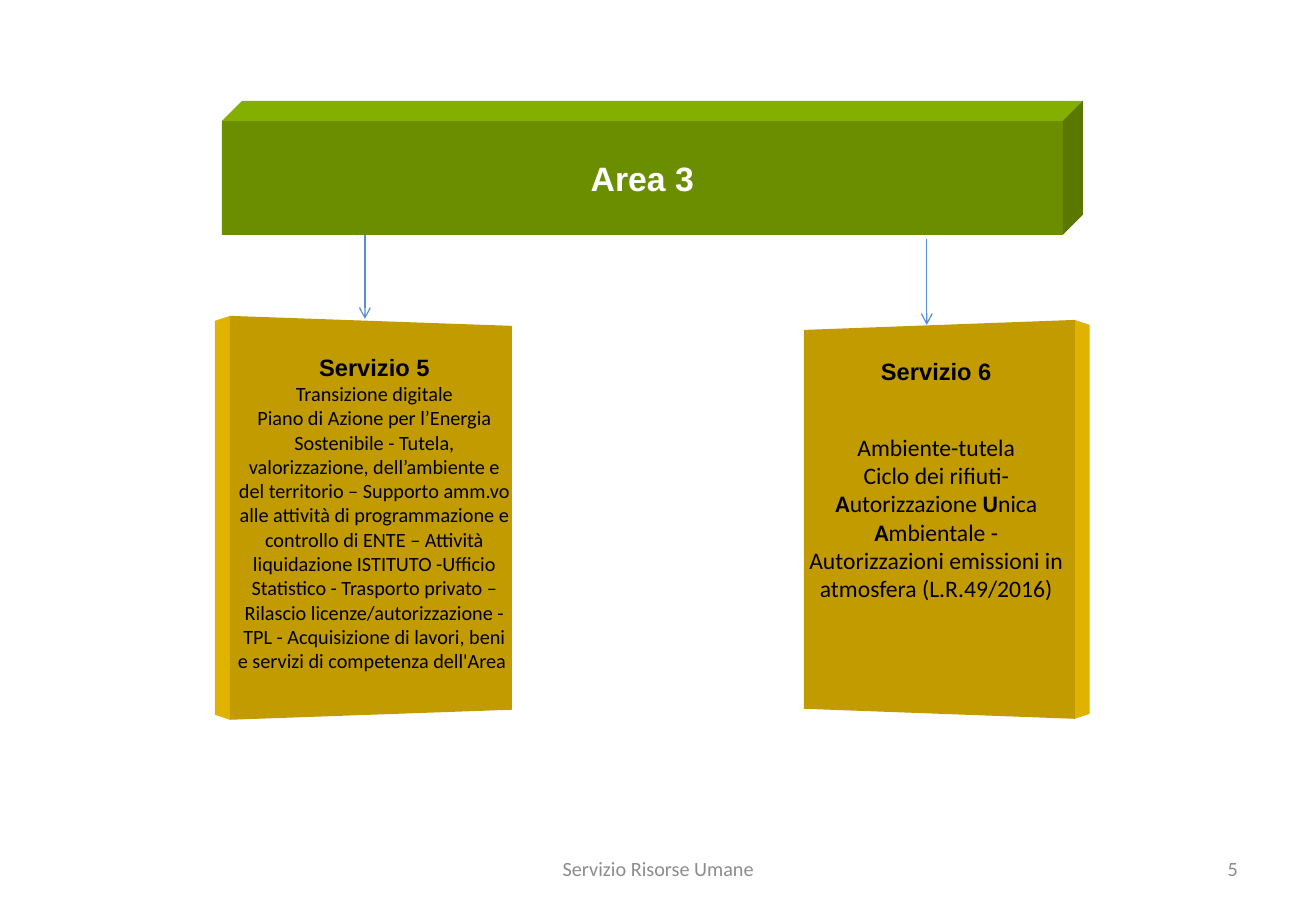
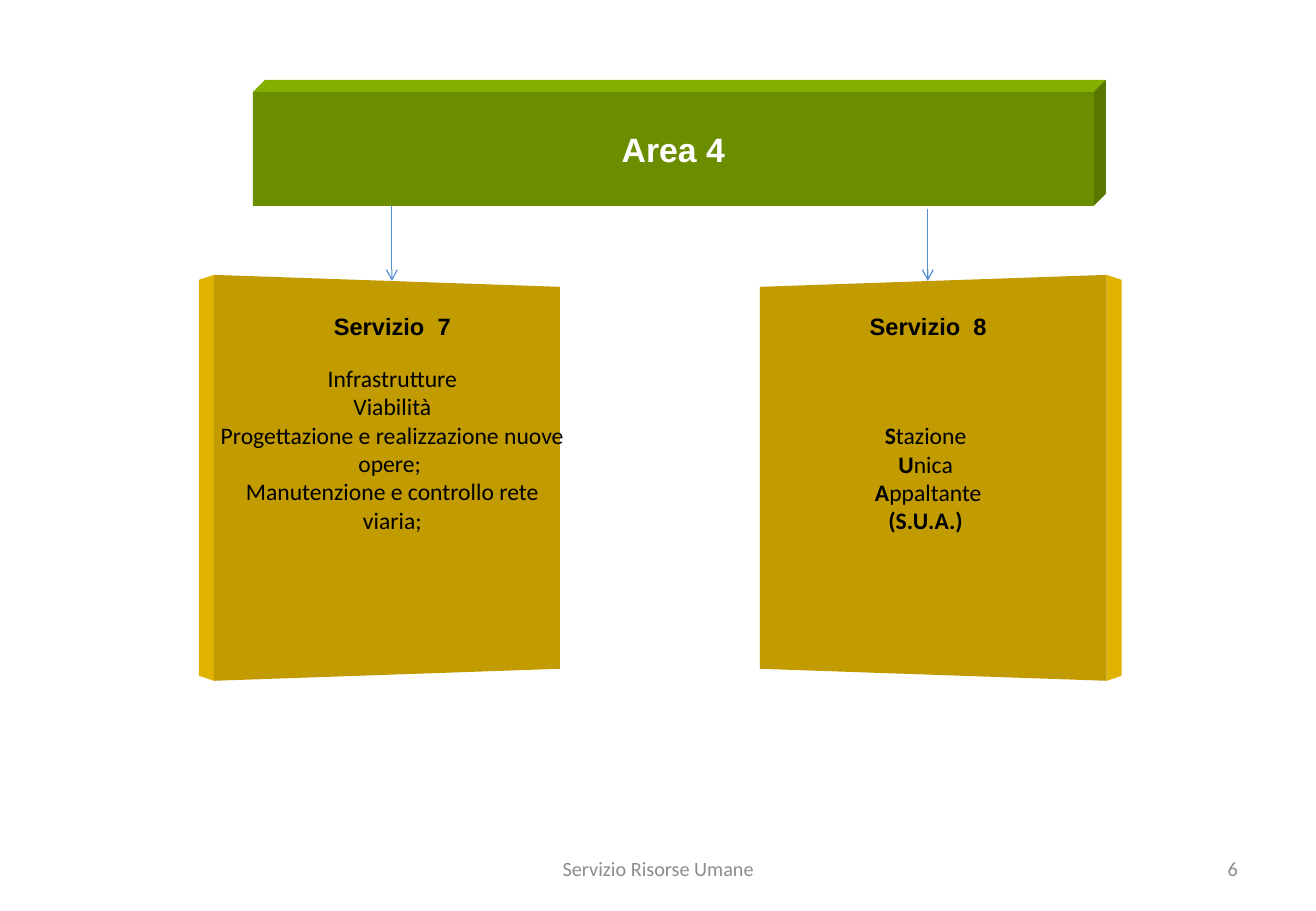
"""Build two organisation slides, each an area bar above two service panels."""
from dataclasses import dataclass

from lxml import etree
from pptx import Presentation
from pptx import util as u
from pptx.dml.color import RGBColor
from pptx.enum import shapes, text
from pptx.oxml.ns import qn

PX = 7526
BAR_W, BAR_H = 841, 114
SIDE_W, SIDE_DROP = 15, 5
HEADING_DROP = 37

WHITE = RGBColor(0xFF, 0xFF, 0xFF)
BLACK = RGBColor(0x00, 0x00, 0x00)
GREY = RGBColor(0x8C, 0x8C, 0x8C)
BLUE = RGBColor(0x55, 0x8E, 0xD5)
GREEN = RGBColor(0x6B, 0x8E, 0x00)
GREEN_TOP = RGBColor(0x83, 0xB0, 0x00)
GREEN_SIDE = RGBColor(0x5A, 0x77, 0x00)
GOLD = RGBColor(0xC2, 0x9B, 0x00)
GOLD_SIDE = RGBColor(0xE0, 0xB3, 0x00)


@dataclass
class Panel:
    inner: int
    outer: int
    top: int
    bottom: int
    slope: int
    text_left: int
    text_width: int
    heading: str
    gap: int
    size: int
    body: list[str]


@dataclass
class Arrow:
    x: int
    top: int
    bottom: int


@dataclass
class Area:
    title: str
    number: str
    left: int
    top: int
    depth: int
    arrows: list[Arrow]
    panels: list[Panel]


AREAS = [
    Area("Area 3", "5", 222, 121, 20, [Arrow(365, 235, 319), Arrow(927, 239, 325)], [
        Panel(512, 230, 316, 720, 10, 237, 275, "Servizio 5", 0, 12, [
            "Transizione digitale",
            "Piano di Azione per l’Energia Sostenibile - Tutela, valorizzazione, "
            "dell’ambiente e del territorio – Supporto amm.vo alle attività di "
            "programmazione e controllo di ENTE – Attività liquidazione ISTITUTO "
            "-Ufficio Statistico - Trasporto privato – Rilascio "
            "licenze/autorizzazione - TPL - Acquisizione di lavori, beni e servizi "
            "di competenza dell'Area "]),
        Panel(804, 1075, 320, 719, 10, 805, 263, "Servizio 6", 28, 14, [
            "Ambiente-tutela",
            "Ciclo dei rifiuti-",
            "*A*utorizzazione *U*nica *A*mbientale -",
            "Autorizzazioni emissioni in atmosfera (L.R.49/2016)"]),
    ]),
    Area("Area 4", "6", 253, 92, 12, [Arrow(392, 206, 281), Arrow(928, 209, 281)], [
        Panel(560, 214, 275, 681, 12, 220, 345, "Servizio  7", 14, 14, [
            "Infrastrutture",
            "Viabilità",
            "Progettazione e realizzazione nuove opere; ",
            "Manutenzione e controllo rete viaria;"]),
        Panel(760, 1107, 275, 681, 12, 756, 345, "Servizio  8", 48, 14, [
            "*S*tazione ", "*U*nica ", "*A*ppaltante", "*(S.U.A.) *"]),
    ]),
]


def px(n: int) -> u.Emu:
    """Turn pixels into EMU."""
    return u.Emu(n * PX)


def place(sp, left: int, top: int, width: int, height: int) -> None:
    """Set the position and size of a shape in pixels."""
    sp.left, sp.top, sp.width, sp.height = map(px, (left, top, width, height))


def style(p, name: str, size: int, color: RGBColor, bold: bool = False,
          align=text.PP_ALIGN.CENTER) -> None:
    """Format a whole paragraph."""
    p.alignment = align
    p.font.name, p.font.size, p.font.bold = name, u.Pt(size), bold
    p.font.color.rgb = color


def add_face(s, color: RGBColor, *points: tuple[int, int]) -> None:
    """Draw one flat face of a solid."""
    builder = s.shapes.build_freeform(*points[0], scale=PX)
    builder.add_line_segments(points[1:], close=True)
    sp = builder.convert_to_shape()
    sp.shadow.inherit = False
    sp.fill.solid()
    sp.fill.fore_color.rgb = color
    sp.line.fill.background()


def add_bar(s, area: Area) -> None:
    """Make the title the front of a green bar with a top and a side."""
    x, y, d = area.left, area.top, area.depth
    right, bottom = x + BAR_W, y + BAR_H
    sp = s.shapes.title
    place(sp, x, y, BAR_W, BAR_H)
    sp.fill.solid()
    sp.fill.fore_color.rgb = GREEN
    tf = sp.text_frame
    tf.text = area.title
    tf.vertical_anchor = text.MSO_ANCHOR.MIDDLE
    style(tf.paragraphs[0], "Arial", 20, WHITE, True)
    add_face(s, GREEN_TOP, (x, y), (x + d, y - d), (right + d, y - d), (right, y))
    add_face(s, GREEN_SIDE, (right, y), (right + d, y - d),
             (right + d, bottom - d), (right, bottom))


def add_panel(s, panel: Panel) -> None:
    """Draw a gold panel in perspective with its heading and duties."""
    top, bottom, slope, outer = panel.top, panel.bottom, panel.slope, panel.outer
    edge = outer + (SIDE_W if outer > panel.inner else -SIDE_W)
    add_face(s, GOLD_SIDE, (outer, top), (edge, top + SIDE_DROP),
             (edge, bottom - SIDE_DROP), (outer, bottom))
    add_face(s, GOLD, (outer, top), (panel.inner, top + slope),
             (panel.inner, bottom - slope), (outer, bottom))
    sp = s.shapes.add_textbox(0, 0, 0, 0)
    place(sp, panel.text_left, top + HEADING_DROP, panel.text_width,
          bottom - top - 2 * HEADING_DROP)
    tf = sp.text_frame
    tf.word_wrap = True
    tf.margin_left = tf.margin_right = tf.margin_top = tf.margin_bottom = 0
    p = tf.paragraphs[0]
    p.text = panel.heading
    p.space_after = u.Pt(panel.gap)
    style(p, "Arial", 14, BLACK, True)
    for line in panel.body:
        p = tf.add_paragraph()
        style(p, "Calibri", panel.size, BLACK)
        for i, part in enumerate(line.split("*")):
            if part:
                r = p.add_run()
                r.text = part
                if i % 2:
                    r.font.bold = True


def add_arrow(s, arrow: Arrow) -> None:
    """Draw a downward arrow from the bar to a panel."""
    cx = s.shapes.add_connector(shapes.MSO_CONNECTOR.STRAIGHT, px(arrow.x),
                                px(arrow.top), px(arrow.x), px(arrow.bottom))
    cx.line.color.rgb = BLUE
    cx.line.width = u.Pt(0.75)
    etree.SubElement(cx.line._get_or_add_ln(), qn("a:tailEnd"), type="arrow")
    etree.SubElement(cx._element.spPr, qn("a:effectLst"))


def add_footer(s, label: str, left: int, width: int, align) -> None:
    """Write one grey footer item."""
    sp = s.shapes.add_textbox(0, 0, 0, 0)
    place(sp, left, 844, width, 49)
    tf = sp.text_frame
    tf.word_wrap = True
    tf.vertical_anchor = text.MSO_ANCHOR.MIDDLE
    tf.text = label
    style(tf.paragraphs[0], "Calibri", 12, GREY, align=align)


def main() -> None:
    """Build and save the slides."""
    prs = Presentation()
    prs.slide_width, prs.slide_height = u.Emu(9906000), u.Emu(6858000)
    for area in AREAS:
        s = prs.slides.add_slide(prs.slide_layouts[5])
        add_bar(s, area)
        for panel in area.panels:
            add_panel(s, panel)
        for arrow in area.arrows:
            add_arrow(s, arrow)
        add_footer(s, "Servizio Risorse Umane", 450, 417, text.PP_ALIGN.CENTER)
        add_footer(s, area.number, 943, 307, text.PP_ALIGN.RIGHT)
    prs.save("out.pptx")


if __name__ == "__main__":
    main()
